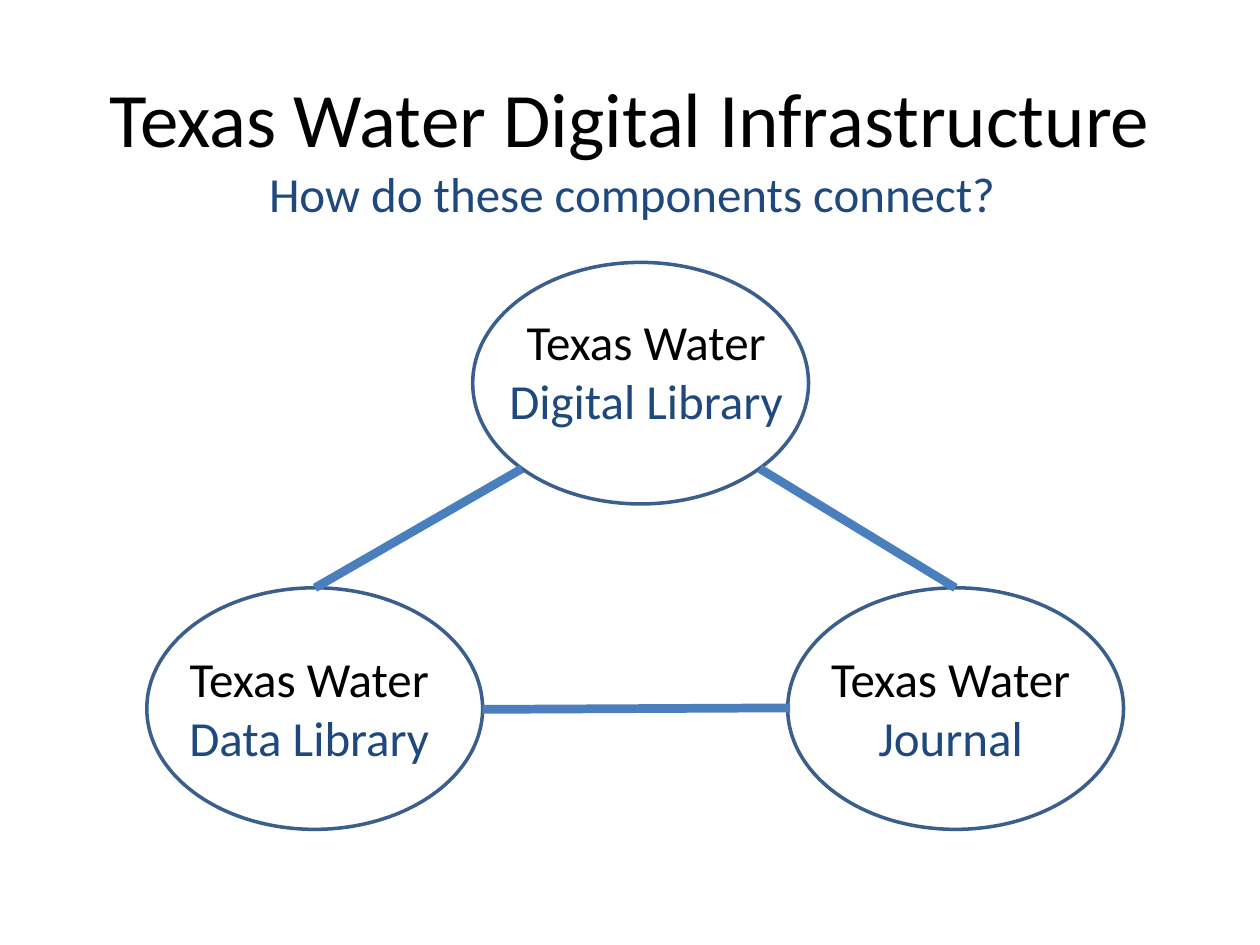
"""Build the Texas Water digital infrastructure slide."""
from lxml.etree import SubElement
from pptx import Presentation
from pptx.dml.color import RGBColor
from pptx.enum.shapes import MSO_CONNECTOR as Connector, MSO_SHAPE as Shape
from pptx.enum.text import MSO_ANCHOR as Anchor, PP_ALIGN as Align
from pptx.oxml.ns import qn
from pptx.util import Cm, Pt

BLACK = RGBColor(0x00, 0x00, 0x00)
NAVY = RGBColor(0x1F, 0x49, 0x7D)
OUTLINE = RGBColor(0x3A, 0x5F, 0x8C)
LINK = RGBColor(0x4B, 0x7E, 0xBC)

presentation = Presentation()
presentation.slide_width = Cm(25.4)
presentation.slide_height = Cm(19.05)
slide = presentation.slides.add_slide(presentation.slide_layouts[6])


def add_text(text, *, left, top, width, height, size=28, color=BLACK,
             ending="", anchor=Anchor.TOP, wrap=True):
    box = slide.shapes.add_textbox(Cm(left), Cm(top), Cm(width), Cm(height))
    frame = box.text_frame
    frame.word_wrap = wrap
    frame.vertical_anchor = anchor
    paragraph = frame.paragraphs[0]
    paragraph.alignment = Align.CENTER
    for words, run_color in ((text, color), (ending, NAVY)):
        if words:
            run = paragraph.add_run()
            run.text = words
            run.font.name = "Calibri"
            run.font.size = Pt(size)
            run.font.color.rgb = run_color


add_text("Texas Water Digital Infrastructure", left=1.27, top=0.76,
         width=22.86, height=3.18, size=44, anchor=Anchor.MIDDLE)

components = [
    ("Digital Library", 9.53, 5.29, 9.53, 6.15),
    ("Journal", 15.88, 11.85, 15.67, 12.95),
    ("Data Library", 2.96, 11.85, 2.74, 12.95),
]
for name, left, top, text_left, text_top in components:
    ellipse = slide.shapes.add_shape(
        Shape.OVAL, Cm(left), Cm(top), Cm(6.77), Cm(4.87))
    ellipse.shadow.inherit = False
    ellipse.fill.background()
    ellipse.line.color.rgb = OUTLINE
    ellipse.line.width = Pt(2)
    add_text("Texas Water ", ending=name, left=text_left, top=text_top,
             width=6.99, height=2.64)

links = [
    (10.52, 9.45, 6.35, 11.85),
    (15.32, 9.45, 19.26, 11.85),
    (15.93, 14.27, 9.73, 14.3),
]
for ends in links:
    connector = slide.shapes.add_connector(
        Connector.STRAIGHT, *[Cm(length) for length in ends])
    connector.line.color.rgb = LINK
    connector.line.width = Pt(5)
    SubElement(connector._element.spPr, qn("a:effectLst"))

add_text("How do these components connect?", left=5.08, top=3.18,
         width=15.32, height=1.45, color=NAVY, wrap=False)

presentation.save("out.pptx")
